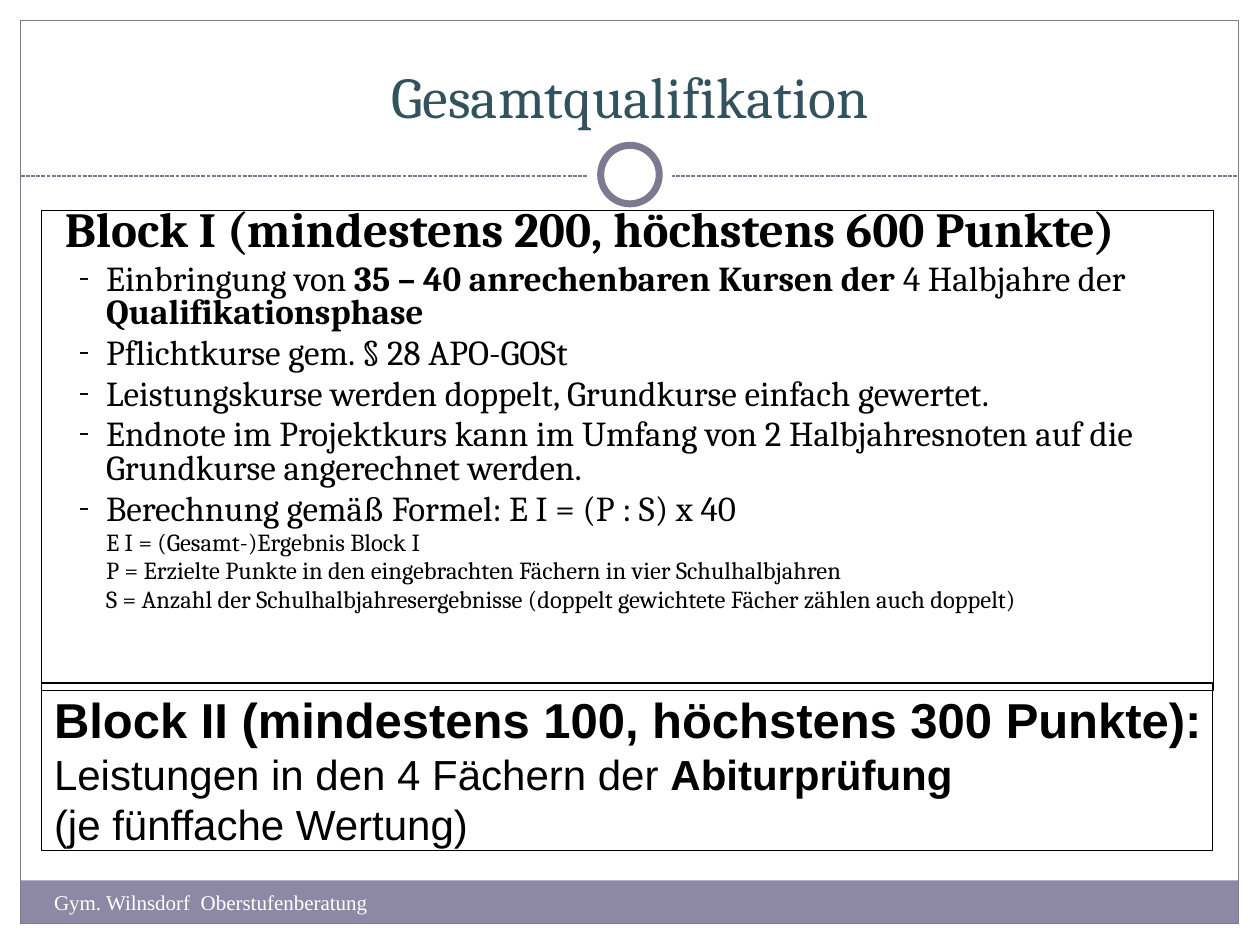
"""Build the slide "Gesamtqualifikation" with both blocks of the points calculation."""
from dataclasses import dataclass

from lxml.etree import SubElement
from pptx import Presentation
from pptx.dml.color import RGBColor as RGB
from pptx.enum.dml import MSO_LINE as DASH
from pptx.enum.shapes import MSO_CONNECTOR as CONN, MSO_SHAPE as SHAPE
from pptx.enum.text import MSO_ANCHOR as ANCHOR, PP_ALIGN as ALIGN
from pptx.oxml.ns import qn
from pptx.util import Cm, Pt


@dataclass(frozen=True)
class Theme:
    white: RGB = RGB.from_string("FFFFFF")
    black: RGB = RGB.from_string("000000")
    title: RGB = RGB.from_string("32525D")
    rule: RGB = RGB.from_string("7C7991")
    band: RGB = RGB.from_string("8D89A4")
    serif: str = "Cambria"
    sans: str = "Arial"
    footer_font: str = "Times New Roman"
    title_size: int = 33
    head_size: int = 28
    block_size: int = 24
    body_size: int = 20
    note_size: int = 14
    footer_size: int = 12
    thin: float = 0.75
    ring: float = 4


def write(p, text, size, font=Theme.serif, color=Theme.black, bold=False):
    r = p.add_run()
    r.text = text
    r.font.size = Pt(size)
    r.font.name = font
    r.font.bold = bold
    r.font.color.rgb = color


def add_shape(kind, left, top, width, height, fill=None, line=None, weight=Theme.thin):
    sp = s.shapes.add_shape(kind, Cm(left), Cm(top), Cm(width), Cm(height))
    sp.shadow.inherit = False
    if fill is None:
        sp.fill.background()
    else:
        sp.fill.solid()
        sp.fill.fore_color.rgb = fill
    if line is None:
        sp.line.fill.background()
    else:
        sp.line.color.rgb = line
        sp.line.width = Pt(weight)
    return sp


theme = Theme()
prs = Presentation()
prs.slide_width, prs.slide_height = Cm(25.4), Cm(19.05)
s = prs.slides.add_slide(prs.slide_layouts[6])

add_shape(SHAPE.RECTANGLE, 0.42, 17.75, 24.55, 0.87, fill=theme.band)
add_shape(SHAPE.RECTANGLE, 0.42, 0.42, 24.55, 18.2, line=theme.rule)
rule = s.shapes.add_connector(CONN.STRAIGHT, Cm(0.42), Cm(3.55), Cm(24.97), Cm(3.55))
rule.line.color.rgb = theme.rule
rule.line.width = Pt(theme.thin)
rule.line.dash_style = DASH.SQUARE_DOT
SubElement(rule._element.spPr, qn("a:effectLst"))
add_shape(SHAPE.OVAL, 11.85, 2.67, 1.7, 1.7, fill=theme.white)
add_shape(SHAPE.OVAL, 12.11, 2.93, 1.18, 1.18, fill=theme.white, line=theme.rule, weight=theme.ring)

title = s.shapes.add_textbox(Cm(0.85), Cm(0.64), Cm(23.7), Cm(2.1))
tf = title.text_frame
tf.word_wrap = True
tf.vertical_anchor = ANCHOR.BOTTOM
p = tf.paragraphs[0]
p.alignment = ALIGN.CENTER
write(p, "Gesamtqualifikation", theme.title_size, color=theme.title)

block_1 = add_shape(SHAPE.RECTANGLE, 0.84, 4.24, 23.62, 9.68, line=theme.black)
tf = block_1.text_frame
tf.word_wrap = True
tf.vertical_anchor = ANCHOR.TOP
tf.margin_left = tf.margin_right = tf.margin_top = tf.margin_bottom = 0
p = tf.paragraphs[0]
p.alignment = ALIGN.LEFT
p.line_spacing = 0.8
p._p.get_or_add_pPr().set("marL", str(Cm(0.47)))
write(p, "Block I (mindestens 200, höchstens 600 Punkte)", theme.head_size, bold=True)

points = [
    [("Einbringung von ", False), ("35 – 40 anrechenbaren Kursen der", True),
     (" 4 Halbjahre der ", False), ("Qualifikationsphase", True)],
    [("Pflichtkurse gem. § 28 APO-GOSt", False)],
    [("Leistungskurse werden doppelt, Grundkurse einfach gewertet.", False)],
    [("Endnote im Projektkurs kann im Umfang von 2 Halbjahresnoten auf die "
      "Grundkurse angerechnet werden.", False)],
    [("Berechnung gemäß Formel: E I = (P : S) x 40", False)],
]
notes = [
    [("E I = (Gesamt-)Ergebnis Block I", False)],
    [("P = Erzielte Punkte in den eingebrachten Fächern in vier Schulhalbjahren", False)],
    [("S = Anzahl der Schulhalbjahresergebnisse (doppelt gewichtete Fächer "
      "zählen auch doppelt)", False)],
]
for items, size, dashed in ((points, theme.body_size, True), (notes, theme.note_size, False)):
    for runs in items:
        p = tf.add_paragraph()
        p.alignment = ALIGN.LEFT
        p.line_spacing = 0.8
        p.space_before = Pt(0.2 * size)
        pPr = p._p.get_or_add_pPr()
        pPr.set("marL", str(Cm(1.3)))
        if dashed:
            pPr.set("indent", str(Cm(-0.56)))
            SubElement(pPr, qn("a:buFont"), typeface=theme.serif)
            SubElement(pPr, qn("a:buChar"), char="-")
        for text, bold in runs:
            write(p, text, size, bold=bold)

block_2 = add_shape(SHAPE.RECTANGLE, 0.84, 13.77, 23.6, 3.38, line=theme.black)
tf = block_2.text_frame
tf.word_wrap = False
tf.vertical_anchor = ANCHOR.TOP
lines = [
    [("Block II (mindestens 100, höchstens 300 Punkte):", theme.head_size, True)],
    [("Leistungen in den 4 Fächern der ", theme.block_size, False),
     ("Abiturprüfung", theme.block_size, True)],
    [("(je fünffache Wertung)", theme.block_size, False)],
]
for i, runs in enumerate(lines):
    p = tf.add_paragraph() if i else tf.paragraphs[0]
    p.alignment = ALIGN.LEFT
    for text, size, bold in runs:
        write(p, text, size, font=theme.sans, bold=bold)

footer = s.shapes.add_textbox(Cm(0.84), Cm(17.8), Cm(9.96), Cm(1.02))
tf = footer.text_frame
tf.word_wrap = True
write(tf.paragraphs[0], "Gym. Wilnsdorf  Oberstufenberatung", theme.footer_size,
      font=theme.footer_font, color=theme.white)

prs.save("out.pptx")
